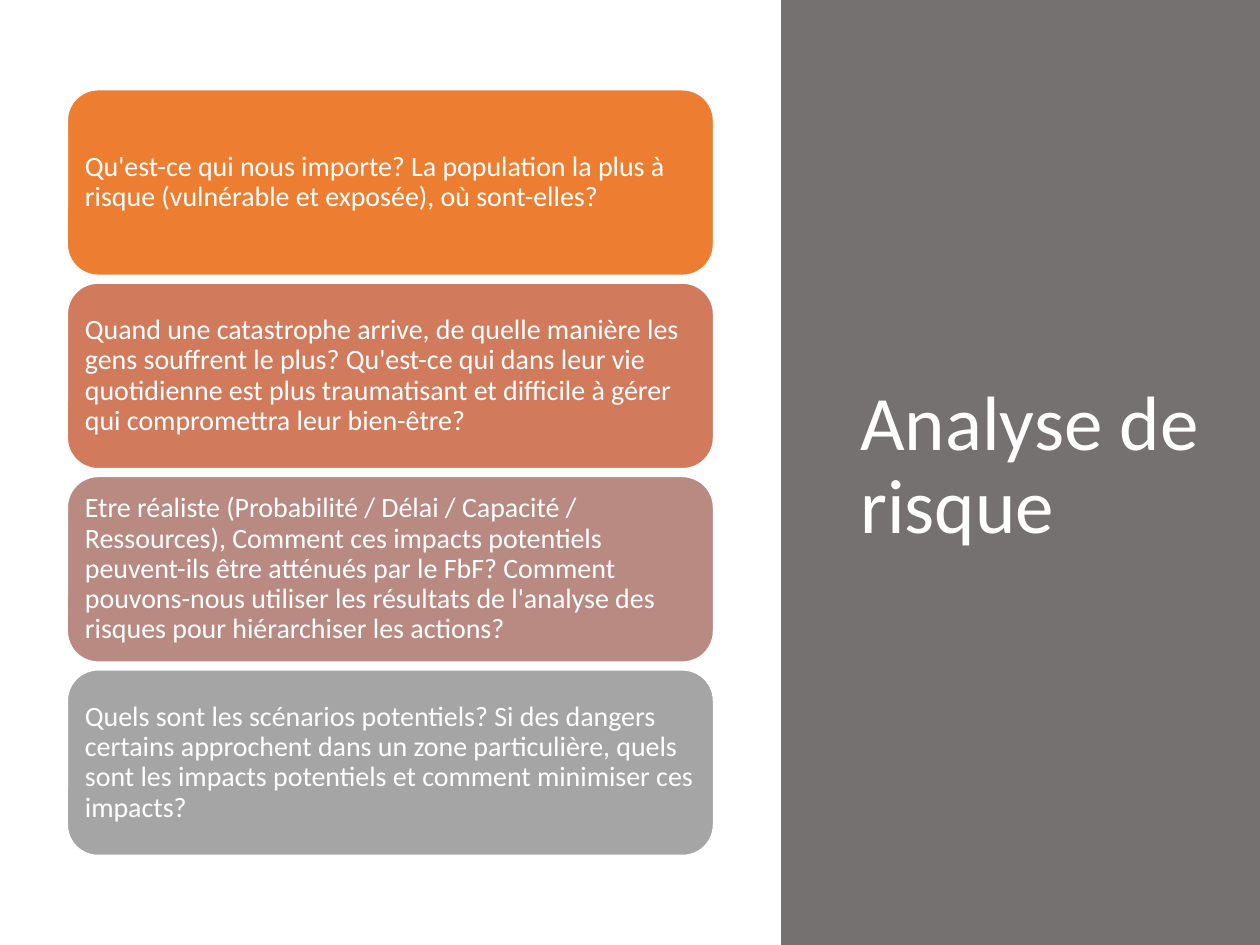
from pptx import Presentation
from pptx.dml.color import RGBColor
from pptx.enum.shapes import MSO_SHAPE as Shape
from pptx.enum.text import MSO_ANCHOR as Anchor, PP_ALIGN as Align
from pptx.util import Pt

TITLE = "Analyse de risque"
CARDS = [
    ("ED7D31", "Qu'est-ce qui nous importe? La population la plus à risque "
               "(vulnérable et exposée), où sont-elles?"),
    ("D17B5C", "Quand une catastrophe arrive, de quelle manière les gens souffrent "
               "le plus? Qu'est-ce qui dans leur vie quotidienne est plus "
               "traumatisant et difficile à gérer qui compromettra leur bien-être?"),
    ("B98A82", "Etre réaliste (Probabilité / Délai / Capacité / Ressources), "
               "Comment ces impacts potentiels peuvent-ils être atténués par le "
               "FbF? Comment pouvons-nous utiliser les résultats de l'analyse des "
               "risques pour hiérarchiser les actions?"),
    ("A5A5A5", "Quels sont les scénarios potentiels? Si des dangers certains "
               "approchent dans un zone particulière, quels sont les impacts "
               "potentiels et comment minimiser ces impacts?"),
]

WIDTH, HEIGHT = 720, 540
PANEL_LEFT = 446.4
TITLE_BOX = (484.6, 50.4, 216.7, 433.4)
CARD_LEFT, CARD_TOP, CARD_WIDTH, CARD_HEIGHT = 38.4, 51.2, 369.4, 106.2
CARD_STEP = 110.5
CARD_MARGIN = 5
WHITE = "FFFFFF"


def color(value):
    return RGBColor.from_string(value)


def points(box):
    return [Pt(length) for length in box]


def add_block(slide, preset, box, fill, line=None):
    shape = slide.shapes.add_shape(preset, *points(box))
    shape.shadow.inherit = False
    shape.fill.solid()
    shape.fill.fore_color.rgb = color(fill)
    if line:
        shape.line.color.rgb = color(line)
        shape.line.width = Pt(1)
    else:
        shape.line.fill.background()
    return shape


def write(shape, text, size, margins=None):
    """Put left-aligned, vertically centred white text in the shape."""
    frame = shape.text_frame
    paragraph = frame.paragraphs[0]
    paragraph.text = text
    font = paragraph.runs[0].font
    font.color.rgb = color(WHITE)
    formats = [
        (frame, {"word_wrap": True, "vertical_anchor": Anchor.MIDDLE,
                 **(margins or {})}),
        (paragraph, {"alignment": Align.LEFT, "line_spacing": 0.9}),
        (font, {"name": "Calibri", "size": Pt(size)}),
    ]
    for target, values in formats:
        for name, value in values.items():
            setattr(target, name, value)


def main():
    presentation = Presentation()
    presentation.slide_width, presentation.slide_height = points((WIDTH, HEIGHT))
    slide = presentation.slides.add_slide(presentation.slide_layouts[6])

    panel_box = (PANEL_LEFT, 0, WIDTH - PANEL_LEFT, HEIGHT)
    add_block(slide, Shape.RECTANGLE, panel_box, "767171")
    write(slide.shapes.add_textbox(*points(TITLE_BOX)), TITLE, 44)

    margins = {f"margin_{side}": Pt(CARD_MARGIN)
               for side in ("left", "top", "right", "bottom")}
    for index, (fill, text) in enumerate(CARDS):
        box = (CARD_LEFT, CARD_TOP + index * CARD_STEP, CARD_WIDTH, CARD_HEIGHT)
        card = add_block(slide, Shape.ROUNDED_RECTANGLE, box, fill, WHITE)
        write(card, text, 16, margins)

    presentation.save("out.pptx")


if __name__ == "__main__":
    main()
